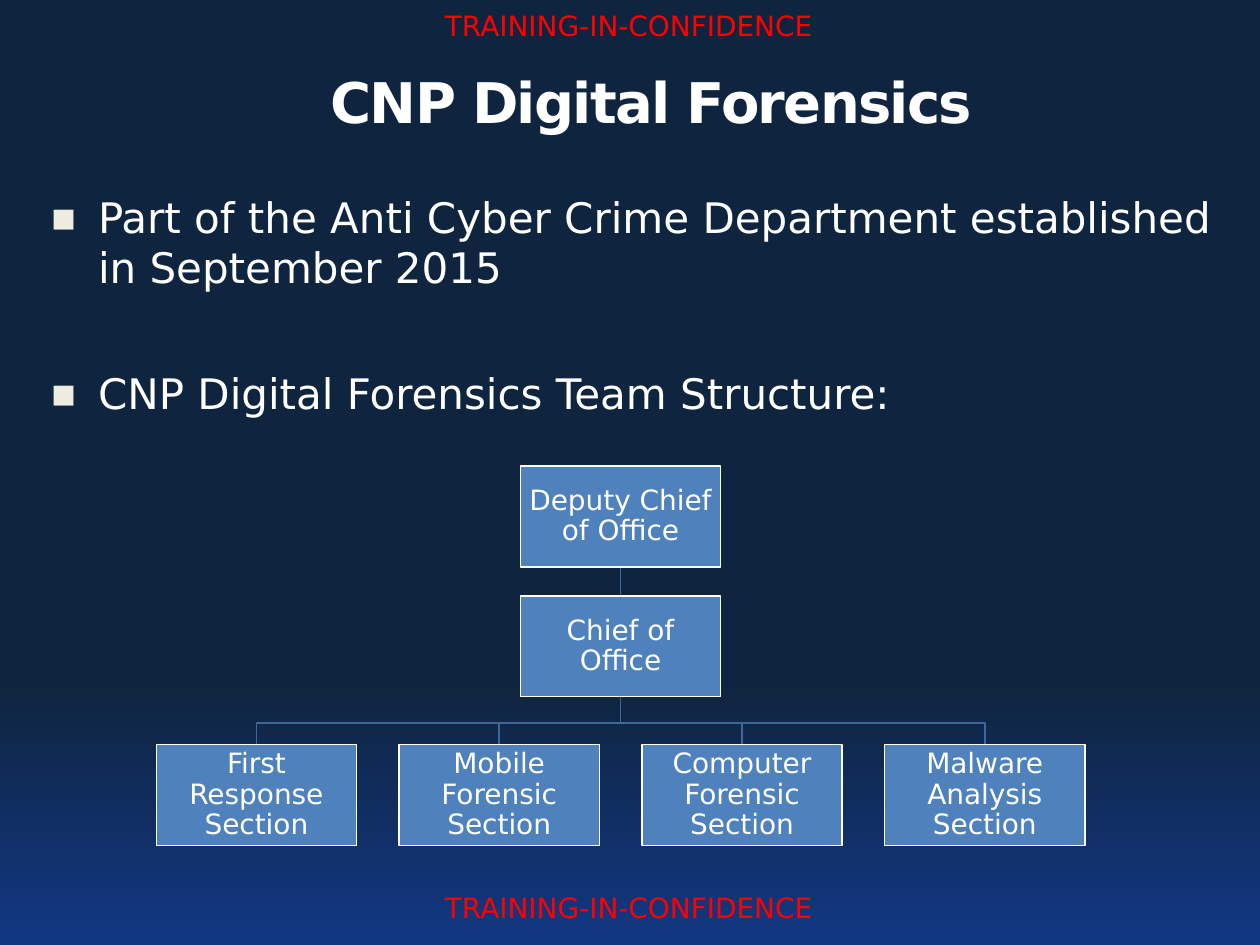
"""Build the CNP Digital Forensics slide with its team organisation chart."""
from dataclasses import dataclass

import pptx
import pptx.dml.color
import pptx.enum.shapes
import pptx.enum.text
import pptx.oxml
import pptx.oxml.ns
import pptx.util

COLORS = {
    "navy": "0F243E", "blue": "123884", "white": "FFFFFF", "red": "FF0000",
    "bullet": "EEECE1", "box": "4F81BD", "link": "3F6797",
}
FONT = "DejaVu Sans"
COLS, ROWS = 100, 75
WIDTH, HEIGHT = pptx.util.Inches(10), pptx.util.Inches(7.5)
BOX_W, BOX_H = 15.9, 8
CENTER, BUS_ROW, SECTION_ROW = 49.25, 57.4, 59.1
SECTION_LEFT, SECTION_STEP = 12.4, 19.27
ALIGN = pptx.enum.text.PP_ALIGN
ANCHOR = pptx.enum.text.MSO_ANCHOR


@dataclass(frozen=True)
class Label:
    text: str
    col: float
    row: float
    cols: float
    rows: float
    size: int = 16
    color: str = "white"
    bold: bool = False
    wrap: bool = True
    anchor: ANCHOR = ANCHOR.TOP


@dataclass(frozen=True)
class Box:
    text: str
    col: float
    row: float

    @property
    def middle(self) -> float:
        return self.col + BOX_W / 2


@dataclass(frozen=True)
class Bullet:
    text: str
    before: int


BANNERS = [Label("TRAINING-IN-CONFIDENCE", 33.3, row, 33.2, 3.7, color="red", wrap=False)
           for row in (0.2, 70.2)]
TITLE = Label("CNP Digital Forensics", 16.5, 4.4, 70.4, 6.8, size=32, bold=True,
              anchor=ANCHOR.BOTTOM)
BULLETS = [
    Bullet("Part of the Anti Cyber Crime Department established in September 2015", 0),
    Bullet("CNP Digital Forensics Team Structure:", 43),
]
DEPUTY = Box("Deputy Chief of Office", CENTER - BOX_W / 2, 37)
CHIEF = Box("Chief of Office", CENTER - BOX_W / 2, 47.3)
SECTIONS = [
    Box(f"{name} Section", SECTION_LEFT + i * SECTION_STEP, SECTION_ROW)
    for i, name in enumerate(
        ["First Response", "Mobile Forensic", "Computer Forensic", "Malware Analysis"])
]


def rgb(name: str) -> pptx.dml.color.RGBColor:
    return pptx.dml.color.RGBColor.from_string(COLORS[name])


def x(col: float) -> int:
    return round(WIDTH * col / COLS)


def y(row: float) -> int:
    return round(HEIGHT * row / ROWS)


def apply(target, formats: dict) -> None:
    for name, value in formats.items():
        setattr(target, name, value)


def write(p, text: str, size: int, color: str = "white", bold: bool = False):
    r = p.add_run()
    r.text = text
    apply(r.font, {"name": FONT, "size": pptx.util.Pt(size), "bold": bold})
    r.font.color.rgb = rgb(color)
    return r


def draw_background(s) -> None:
    fill = s.background.fill
    fill.gradient()
    fill.gradient_angle = 270
    for stop, position, color in zip(fill.gradient_stops, (0.72, 1), ("navy", "blue")):
        stop.position = position
        stop.color.rgb = rgb(color)


def draw_label(s, label: Label):
    sp = s.shapes.add_textbox(x(label.col), y(label.row), x(label.cols), y(label.rows))
    tf = sp.text_frame
    apply(tf, {"word_wrap": label.wrap, "vertical_anchor": label.anchor})
    p = tf.paragraphs[0]
    p.alignment = ALIGN.CENTER
    return write(p, label.text, label.size, label.color, label.bold)


def draw_bullets(s, bullets: list[Bullet]) -> None:
    tf = s.shapes.add_textbox(x(2.3), y(14.7), x(96.3), y(19.8)).text_frame
    tf.word_wrap = True
    ns = pptx.oxml.ns.nsdecls("a")
    marks = (
        f'<a:buClr {ns}><a:srgbClr val="{COLORS["bullet"]}"/></a:buClr>',
        f'<a:buSzPct {ns} val="95000"/>',
        f'<a:buFont {ns} typeface="{FONT}"/>',
        f'<a:buChar {ns} char="▪"/>',
    )
    for i, bullet in enumerate(bullets):
        p = tf.add_paragraph() if i else tf.paragraphs[0]
        pPr = p._p.get_or_add_pPr()
        pPr.set("marL", str(x(4.5)))
        pPr.set("indent", str(-x(3.8)))
        for mark in marks:
            pPr.append(pptx.oxml.parse_xml(mark))
        p.space_before = pptx.util.Pt(bullet.before)
        write(p, bullet.text, 24)


def draw_link(s, parent: Box, child: Box) -> None:
    path = s.shapes.build_freeform(x(parent.middle), y(parent.row + BOX_H))
    turns = [(parent.middle, BUS_ROW), (child.middle, BUS_ROW), (child.middle, child.row)]
    path.add_line_segments([(x(col), y(row)) for col, row in turns], close=False)
    sp = path.convert_to_shape()
    sp.shadow.inherit = False
    sp.fill.background()
    sp.line.color.rgb = rgb("link")
    sp.line.width = pptx.util.Pt(0.85)


def draw_box(s, box: Box) -> None:
    sp = s.shapes.add_shape(pptx.enum.shapes.MSO_SHAPE.RECTANGLE,
                            x(box.col), y(box.row), x(BOX_W), y(BOX_H))
    sp.shadow.inherit = False
    sp.fill.solid()
    sp.fill.fore_color.rgb = rgb("box")
    sp.line.color.rgb = rgb("white")
    sp.line.width = pptx.util.Pt(0.85)
    tf = sp.text_frame
    inset = pptx.util.Inches(0.01)
    apply(tf, {"word_wrap": True, "vertical_anchor": ANCHOR.MIDDLE,
               "margin_left": inset, "margin_right": inset,
               "margin_top": inset, "margin_bottom": inset})
    p = tf.paragraphs[0]
    apply(p, {"alignment": ALIGN.CENTER, "line_spacing": 0.9})
    write(p, box.text, 16)


def main() -> None:
    prs = pptx.Presentation()
    apply(prs, {"slide_width": WIDTH, "slide_height": HEIGHT})
    s = prs.slides.add_slide(prs.slide_layouts[6])
    draw_background(s)
    for banner in BANNERS:
        draw_label(s, banner)
    draw_label(s, TITLE).font._element.set("spc", "-100")
    draw_bullets(s, BULLETS)
    for section in reversed(SECTIONS):
        draw_link(s, DEPUTY, section)
    for box in (CHIEF, DEPUTY, *SECTIONS):
        draw_box(s, box)
    prs.save("out.pptx")


if __name__ == "__main__":
    main()
